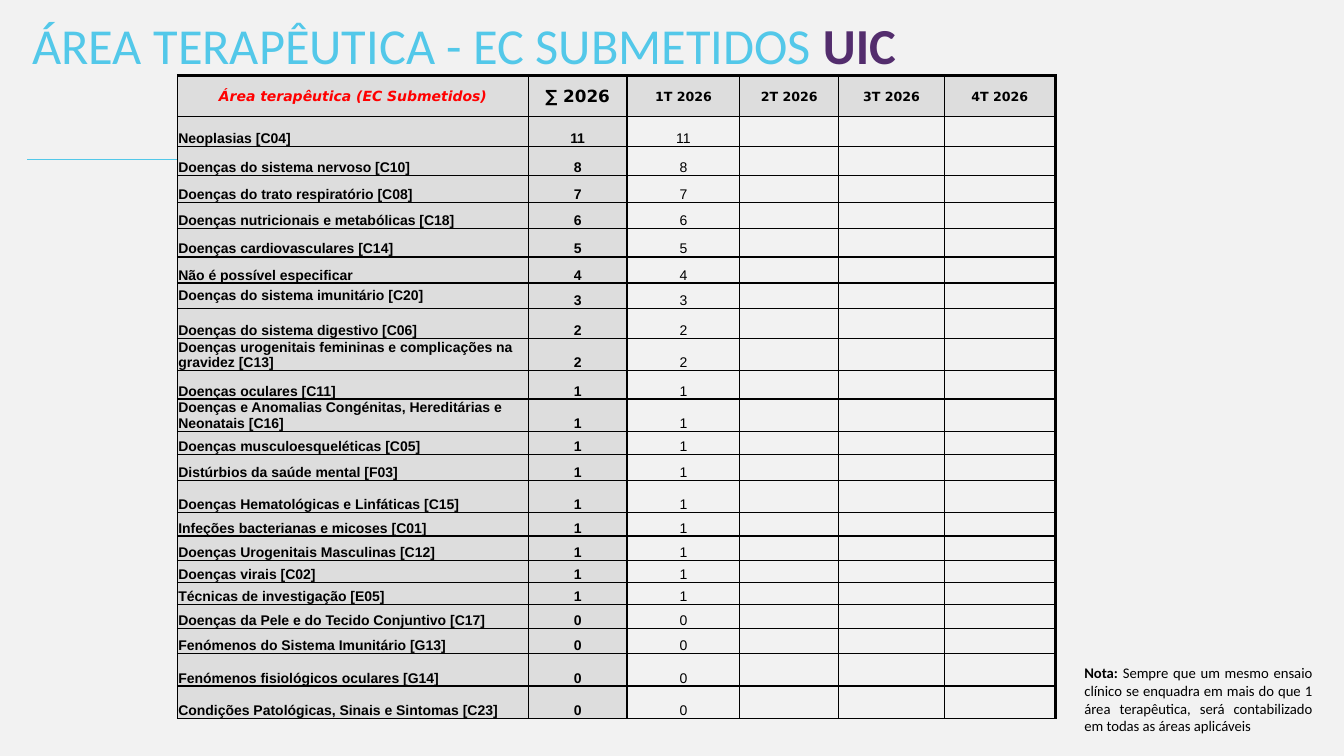
from typing import NamedTuple

from lxml.etree import SubElement
from pptx import Presentation
from pptx.dml.color import RGBColor
from pptx.enum.shapes import MSO_CONNECTOR
from pptx.enum.text import MSO_ANCHOR, MSO_AUTO_SIZE, PP_ALIGN
from pptx.oxml.ns import qn
from pptx.util import Pt

BLACK = RGBColor(0x00, 0x00, 0x00)
RED = RGBColor(0xFF, 0x00, 0x00)
CYAN = RGBColor(0x53, 0xC8, 0xE9)
PURPLE = RGBColor(0x53, 0x2D, 0x6D)
GREY = RGBColor(0xDD, 0xDD, 0xDD)
PALE = RGBColor(0xF2, 0xF2, 0xF2)

THIN, THICK = 1, 2.25
WIDTHS = (250.6, 70.6, 80.6, 70.6, 75.6, 79.1)
HEAD_HIGH = 29.5


class Head(NamedTuple):
    text: str
    size: float = 9
    color: RGBColor = BLACK
    italic: bool = False


class Area(NamedTuple):
    name: str
    count: int
    high: float
    anchor: MSO_ANCHOR = MSO_ANCHOR.BOTTOM


HEADS = (
    Head("Área terapêutica (EC Submetidos)", 10, RED, True),
    Head("∑ 2026", 12),
    Head("1T 2026"),
    Head("2T 2026"),
    Head("3T 2026"),
    Head("4T 2026"),
)
AREAS = (
    Area("Neoplasias [C04]", 11, 20.9),
    Area("Doenças do sistema nervoso [C10]", 8, 20.9),
    Area("Doenças do trato respiratório [C08]", 7, 19.4),
    Area("Doenças nutricionais e metabólicas [C18]", 6, 18.7),
    Area("Doenças cardiovasculares [C14]", 5, 20.2),
    Area("Não é possível especificar", 4, 18.7),
    Area("Doenças do sistema imunitário [C20]", 3, 18, MSO_ANCHOR.MIDDLE),
    Area("Doenças do sistema digestivo [C06]", 2, 21.6),
    Area("Doenças urogenitais femininas e complicações na gravidez [C13]", 2, 20.2),
    Area("Doenças oculares [C11]", 1, 20.2),
    Area("Doenças e Anomalias Congénitas, Hereditárias e Neonatais [C16]", 1, 16.6),
    Area("Doenças musculoesqueléticas [C05]", 1, 16.6),
    Area("Distúrbios da saúde mental [F03]", 1, 18.7),
    Area("Doenças Hematológicas e Linfáticas [C15]", 1, 23),
    Area("Infeções bacterianas e micoses [C01]", 1, 16.6),
    Area("Doenças Urogenitais Masculinas [C12]", 1, 17.3),
    Area("Doenças virais [C02]", 1, 15.8),
    Area("Técnicas de investigação [E05]", 1, 15.8),
    Area("Doenças da Pele e do Tecido Conjuntivo [C17]", 0, 17.3),
    Area("Fenómenos do Sistema Imunitário [G13]", 0, 18),
    Area("Fenómenos fisiológicos oculares [G14]", 0, 23),
    Area("Condições Patológicas, Sinais e Sintomas [C23]", 0, 23),
)


def write(para, text: str, *, font: str = "Calibri", size: float = 10,
          color: RGBColor = BLACK, bold: bool = False, italic: bool = False,
          align: PP_ALIGN = PP_ALIGN.LEFT) -> None:
    """Add one formatted run to a paragraph."""
    para.alignment = align
    run = para.add_run()
    run.text = text
    face = run.font
    face.name, face.size, face.bold, face.italic = font, Pt(size), bold, italic
    face.color.rgb = color


def border(cell, side: str, width: float) -> None:
    props = cell._tc.get_or_add_tcPr()
    line = SubElement(props, qn(f"a:ln{side}"), w=str(Pt(width)))
    fill = SubElement(line, qn("a:solidFill"))
    SubElement(fill, qn("a:srgbClr"), val=str(BLACK))


def style(cell, row: int, col: int) -> None:
    """Set margins, borders and fill of a cell."""
    cell.margin_left = cell.margin_right = cell.margin_top = Pt(0.7)
    cell.margin_bottom = Pt(0)
    border(cell, "L", THIN)
    border(cell, "R", THICK if col == len(WIDTHS) - 1 else THIN)
    border(cell, "T", THICK if row == 0 else THIN)
    border(cell, "B", THIN)
    if row == 0 or col < 2:
        cell.fill.solid()
        cell.fill.fore_color.rgb = GREY
    else:
        cell.fill.background()


def fill_row(table, row: int, area: Area) -> None:
    """Write the name, the total and the first quarter of an area."""
    texts = (area.name, str(area.count), str(area.count))
    for col in range(len(WIDTHS)):
        cell = table.cell(row, col)
        cell.vertical_anchor = area.anchor if col == 0 else MSO_ANCHOR.BOTTOM
        para = cell.text_frame.paragraphs[0]
        if col < len(texts):
            write(para, texts[col], font="Arial", bold=col < 2,
                  align=PP_ALIGN.CENTER if col else PP_ALIGN.LEFT)
        else:
            SubElement(para._p, qn("a:endParaRPr"), sz="1000")


def add_grid(slide) -> None:
    highs = [HEAD_HIGH] + [area.high for area in AREAS]
    table = slide.shapes.add_table(len(highs), len(WIDTHS), Pt(126.7), Pt(54),
                                   Pt(sum(WIDTHS)), Pt(sum(highs))).table
    table.first_row = table.horz_banding = False
    for col, width in enumerate(WIDTHS):
        table.columns[col].width = Pt(width)
    for row, high in enumerate(highs):
        table.rows[row].height = Pt(high)
        for col in range(len(WIDTHS)):
            style(table.cell(row, col), row, col)
    for col, head in enumerate(HEADS):
        cell = table.cell(0, col)
        cell.vertical_anchor = MSO_ANCHOR.MIDDLE
        write(cell.text_frame.paragraphs[0], head.text, font="DejaVu Sans",
              size=head.size, color=head.color, bold=True,
              italic=head.italic, align=PP_ALIGN.CENTER)
    for row, area in enumerate(AREAS, 1):
        fill_row(table, row, area)


def add_title(slide) -> None:
    title = slide.shapes.title
    title.left, title.top, title.width, title.height = (
        Pt(7.2), Pt(-7.9), Pt(766), Pt(64))
    frame = title.text_frame
    frame.auto_size = MSO_AUTO_SIZE.NONE
    frame.vertical_anchor = MSO_ANCHOR.BOTTOM
    frame.margin_left, frame.margin_bottom = Pt(16), Pt(3)
    para = frame.paragraphs[0]
    write(para, "ÁREA TERAPÊUTICA - EC SUBMETIDOS ", size=36, color=CYAN)
    write(para, "UIC", size=36, color=PURPLE, bold=True)


def add_rule(slide) -> None:
    rule = slide.shapes.add_connector(MSO_CONNECTOR.STRAIGHT, Pt(419), Pt(113.8),
                                      Pt(19.4), Pt(113.8))
    rule.line.color.rgb = CYAN
    rule.line.width = Pt(0.5)
    SubElement(rule._element.spPr, qn("a:effectLst"))


def add_note(slide) -> None:
    frame = slide.shapes.add_textbox(Pt(767.5), Pt(470.9), Pt(177.1),
                                     Pt(58.3)).text_frame
    frame.word_wrap = True
    frame.auto_size = MSO_AUTO_SIZE.SHAPE_TO_FIT_TEXT
    para = frame.paragraphs[0]
    write(para, "Nota: ", size=10.5, bold=True)
    write(para, "Sempre que um mesmo ensaio clínico se enquadra em mais do que "
                "1 área terapêutica, será contabilizado em todas as áreas "
                "aplicáveis", size=10.5, align=PP_ALIGN.JUSTIFY)


def main() -> None:
    deck = Presentation()
    deck.slide_width, deck.slide_height = Pt(960), Pt(540)
    slide = deck.slides.add_slide(deck.slide_layouts[5])
    slide.background.fill.solid()
    slide.background.fill.fore_color.rgb = PALE
    add_rule(slide)
    add_title(slide)
    add_grid(slide)
    add_note(slide)
    deck.save("out.pptx")


if __name__ == "__main__":
    main()
